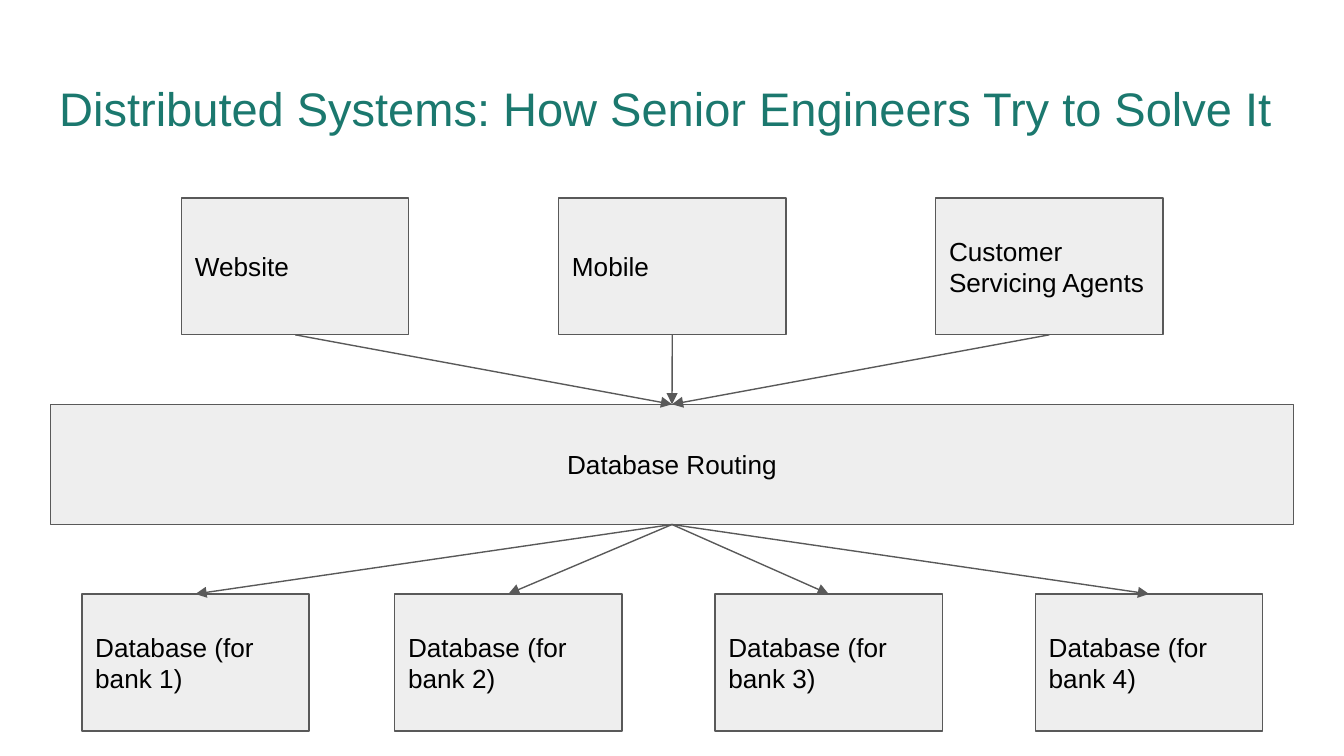
import pptx
import pptx.util
import pptx.dml.color
import pptx.enum.shapes
import pptx.enum.text
import pptx.oxml
import pptx.oxml.ns

Pt = pptx.util.Pt
ALIGN = pptx.enum.text.PP_ALIGN
ANCHOR = pptx.enum.text.MSO_ANCHOR
COLORS = {"title": "1B786E", "fill": "EEEEEE", "line": "595959", "text": "000000"}
FRAME = {
    "margin_left": Pt(7.2), "margin_right": Pt(7.2),
    "margin_top": Pt(7.2), "margin_bottom": Pt(7.2),
    "word_wrap": True, "auto_size": pptx.enum.text.MSO_AUTO_SIZE.NONE,
}
WIDTH, HEIGHT = 121.7, 73.4


def color(name):
    """Return the named colour."""
    return pptx.dml.color.RGBColor.from_string(COLORS[name])


def write(shape, text, size, tint, align=ALIGN.LEFT, anchor=ANCHOR.MIDDLE):
    """Put formatted text in a shape."""
    frame = shape.text_frame
    frame.text = text
    for key, value in {**FRAME, "vertical_anchor": anchor}.items():
        setattr(frame, key, value)
    para = frame.paragraphs[0]
    para.alignment = align
    font = para.runs[0].font
    for key, value in {"name": "Arial", "size": Pt(size)}.items():
        setattr(font, key, value)
    font.color.rgb = color(tint)


def add_title(slide, box, text):
    """Place the slide title in its box."""
    title = slide.shapes.title
    for key, value in zip(("left", "top", "width", "height"), box):
        setattr(title, key, Pt(value))
    write(title, text, 25.2, "title", anchor=ANCHOR.TOP)


def add_box(slide, box, text, align=ALIGN.LEFT):
    """Draw one labelled component."""
    kind = pptx.enum.shapes.MSO_SHAPE.RECTANGLE
    shape = slide.shapes.add_shape(kind, *map(Pt, box))
    shape.shadow.inherit = False
    shape.fill.solid()
    shape.fill.fore_color.rgb = color("fill")
    shape.line.color.rgb = color("line")
    shape.line.width = Pt(0.75)
    write(shape, text, 14, "text", align)
    return shape


def add_row(slide, box, labels, steps):
    """Draw a row of components at the given steps from the left of its box."""
    left, top, width, height = box
    return [add_box(slide, (left + step, top, width, height), label)
            for label, step in zip(labels, steps)]


def add_arrow(slide, start, end):
    """Join the bottom of one component to the top of another."""
    kind = pptx.enum.shapes.MSO_CONNECTOR.STRAIGHT
    arrow = slide.shapes.add_connector(kind, 0, 0, 0, 0)
    arrow.begin_connect(start, 2)
    arrow.end_connect(end, 0)
    arrow.line.color.rgb = color("line")
    arrow.line.width = Pt(0.75)
    line = arrow.line._get_or_add_ln()
    head = pptx.oxml.parse_xml(
        f'<a:tailEnd {pptx.oxml.ns.nsdecls("a")} type="triangle"/>')
    line.append(head)
    line.addnext(pptx.oxml.parse_xml(
        f'<a:effectLst {pptx.oxml.ns.nsdecls("a")}/>'))


def main():
    """Build the slide and save it."""
    deck = pptx.Presentation()
    deck.slide_width, deck.slide_height = Pt(720), Pt(405)
    slide = deck.slides.add_slide(deck.slide_layouts[5])
    add_title(slide, (24.5, 35.3, 671, 45.4),
              "Distributed Systems: How Senior Engineers Try to Solve It")
    clients = add_row(slide, (97.3, 106, WIDTH, HEIGHT),
                      ("Website", "Mobile", "Customer Servicing Agents"),
                      [202 * i for i in range(3)])
    banks = add_row(slide, (43.9, 318.2, WIDTH, HEIGHT),
                    [f"Database (for bank {i})" for i in range(1, 5)],
                    (0, 167.6, 339.2, 510.8))
    router = add_box(slide, (27, 216.6, 666, 64.4), "Database Routing", ALIGN.CENTER)
    for client in clients:
        add_arrow(slide, client, router)
    for bank in banks:
        add_arrow(slide, router, bank)
    deck.save("out.pptx")


if __name__ == "__main__":
    main()
